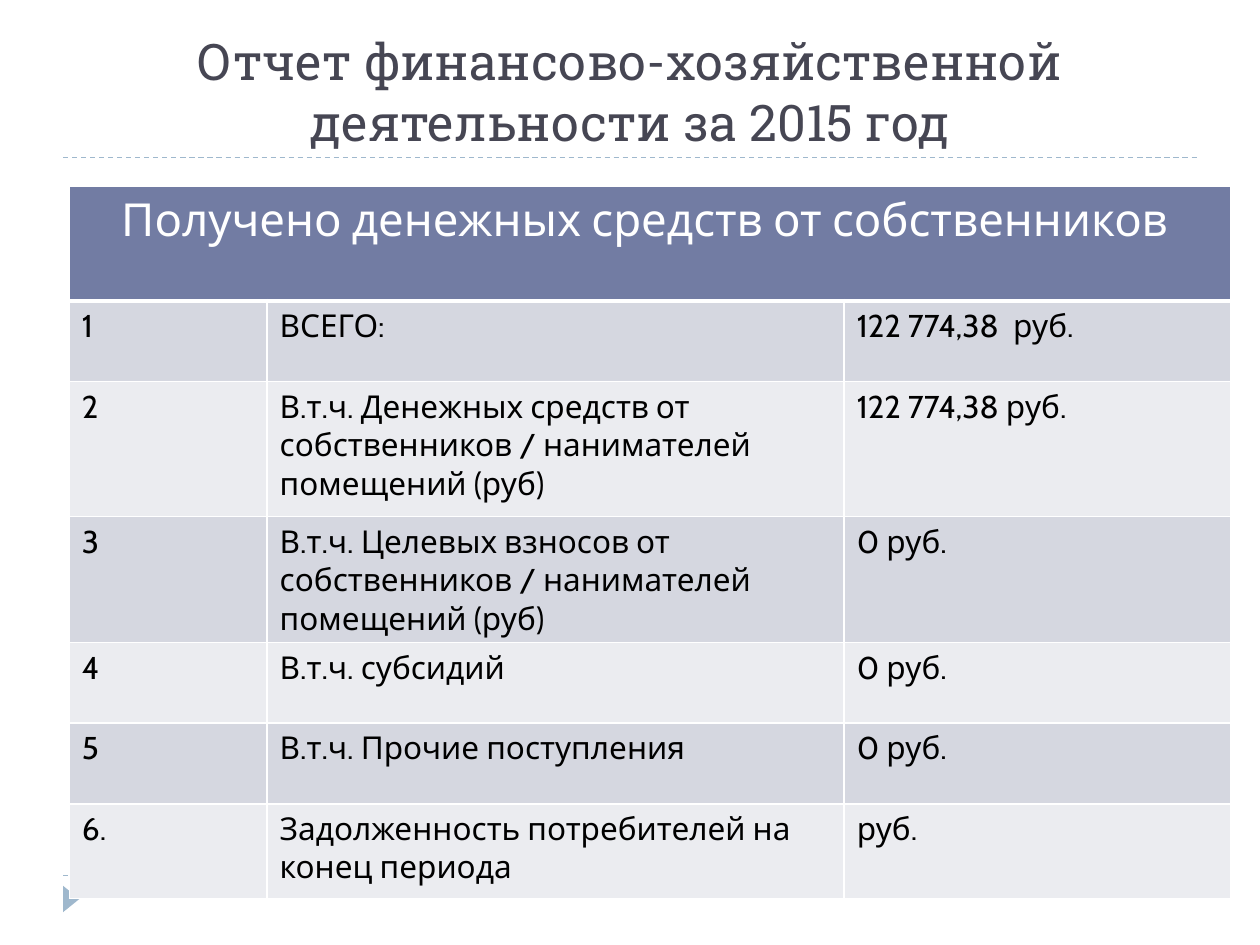
"""Build the 2015 financial report slide with a table of receipts."""
from lxml.etree import SubElement
from pptx import Presentation
from pptx.dml.color import RGBColor
from pptx.enum.dml import MSO_LINE
from pptx.enum.shapes import MSO_CONNECTOR, MSO_SHAPE
from pptx.enum.text import MSO_ANCHOR, PP_ALIGN
from pptx.oxml.ns import qn
from pptx.util import Inches, Pt

TITLE = "Отчет финансово-хозяйственной деятельности за 2015 год"
HEADING = "Получено денежных средств от собственников "
RECEIPTS = [
    ("1", "ВСЕГО:", "122 774,38  руб."),
    ("2", "В.т.ч. Денежных средств от собственников / нанимателей помещений (руб)",
     "122 774,38 руб."),
    ("3", "В.т.ч. Целевых взносов от собственников / нанимателей помещений (руб)",
     "0 руб."),
    ("4", "В.т.ч. субсидий", "0 руб."),
    ("5", "В.т.ч. Прочие поступления", "0 руб."),
    ("6.", "Задолженность потребителей на конец периода", "руб."),
]
COLUMN_WIDTHS = [1.57, 4.58, 3.07]
ROW_HEIGHTS = [0.91, 0.64, 1.07, 0.98, 0.64, 0.64, 0.75]
RULE_HEIGHTS = [6.95, 1.25]

INK = RGBColor(0x46, 0x46, 0x53)
ACCENT = RGBColor(0x9F, 0xB8, 0xCD)
HEADING_FILL = RGBColor(0x72, 0x7C, 0xA3)
BAND_FILLS = [RGBColor(0xD5, 0xD7, 0xE0), RGBColor(0xEB, 0xEC, 0xF0)]
WHITE = RGBColor(0xFF, 0xFF, 0xFF)
BLACK = RGBColor(0, 0, 0)


def write(frame, text, size, color, font="Cabin", align=PP_ALIGN.LEFT):
    frame.word_wrap = True
    paragraph = frame.paragraphs[0]
    paragraph.alignment = align
    run = paragraph.add_run()
    run.text = text
    run.font.size = Pt(size)
    run.font.name = font
    run.font.color.rgb = color


def style_cell(cell, fill, bottom=1):
    properties = cell._tc.get_or_add_tcPr()
    for side, width in (("L", 1), ("R", 1), ("T", 1), ("B", bottom)):
        border = SubElement(properties, qn(f"a:ln{side}"), w=str(Pt(width)))
        SubElement(SubElement(border, qn("a:solidFill")), qn("a:srgbClr"), val=str(WHITE))
    cell.fill.solid()
    cell.fill.fore_color.rgb = fill


def add_decoration(slide):
    for y in RULE_HEIGHTS:
        rule = slide.shapes.add_connector(
            MSO_CONNECTOR.STRAIGHT, Inches(0.5), Inches(y), Inches(9.5), Inches(y))
        rule.line.color.rgb = ACCENT
        rule.line.width = Pt(0.75)
        rule.line.dash_style = MSO_LINE.DASH
        SubElement(rule._element.spPr, qn("a:effectLst"))
    marker = slide.shapes.add_shape(
        MSO_SHAPE.ISOSCELES_TRIANGLE, Inches(0.46), Inches(7.07), Inches(0.21), Inches(0.13))
    marker.rotation = 90
    marker.shadow.inherit = False
    marker.fill.solid()
    marker.fill.fore_color.rgb = ACCENT
    marker.line.fill.background()


def add_title(slide):
    title = slide.shapes.add_textbox(Inches(0.5), Inches(0.25), Inches(9), Inches(1))
    title.text_frame.vertical_anchor = MSO_ANCHOR.BOTTOM
    write(title.text_frame, TITLE, 28.8, INK, font="Roboto Slab", align=PP_ALIGN.CENTER)


def add_receipts(slide):
    table = slide.shapes.add_table(
        len(ROW_HEIGHTS), len(COLUMN_WIDTHS), Inches(0.55), Inches(1.48),
        Inches(sum(COLUMN_WIDTHS)), Inches(sum(ROW_HEIGHTS))).table
    for column, width in zip(table.columns, COLUMN_WIDTHS):
        column.width = Inches(width)
    for row, height in zip(table.rows, ROW_HEIGHTS):
        row.height = Inches(height)
    heading = table.cell(0, 0)
    heading.merge(table.cell(0, len(COLUMN_WIDTHS) - 1))
    for cell in table.rows[0].cells:
        style_cell(cell, HEADING_FILL, bottom=3)
    write(heading.text_frame, HEADING, 26, WHITE, align=PP_ALIGN.CENTER)
    for r, receipt in enumerate(RECEIPTS):
        for c, text in enumerate(receipt):
            cell = table.cell(r + 1, c)
            style_cell(cell, BAND_FILLS[r % 2])
            write(cell.text_frame, text, 18, BLACK)


def main():
    deck = Presentation()
    deck.slide_width, deck.slide_height = Inches(10), Inches(7.5)
    slide = deck.slides.add_slide(deck.slide_layouts[6])
    add_decoration(slide)
    add_title(slide)
    add_receipts(slide)
    deck.save("out.pptx")


if __name__ == "__main__":
    main()
